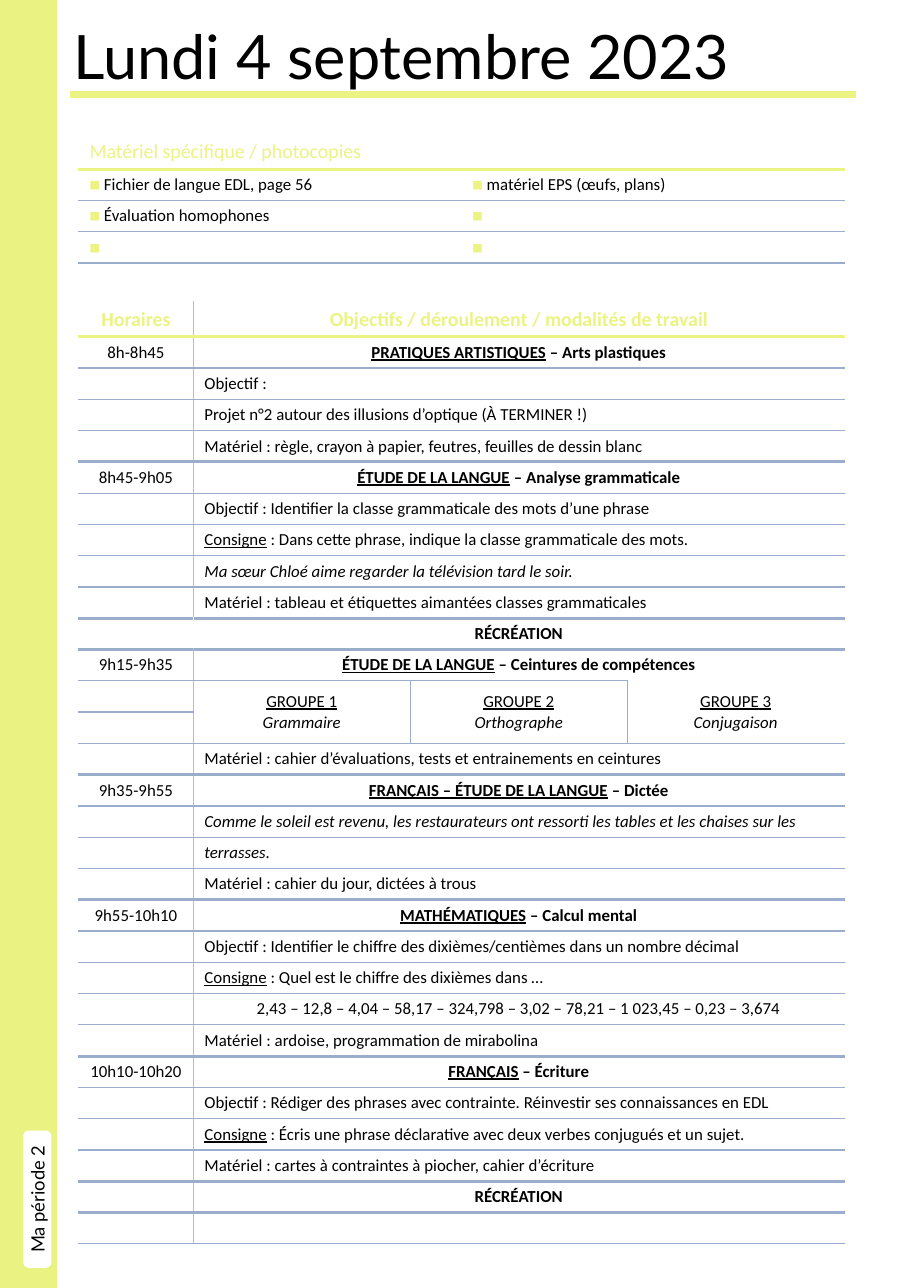
from dataclasses import dataclass

from lxml import etree
from pptx import Presentation
from pptx.dml.color import RGBColor
from pptx.enum.shapes import MSO_CONNECTOR, MSO_SHAPE
from pptx.enum.text import MSO_ANCHOR, PP_ALIGN
from pptx.oxml.ns import qn
from pptx.util import Pt

LEFT, CENTER = PP_ALIGN.LEFT, PP_ALIGN.CENTER
MIDDLE = MSO_ANCHOR.MIDDLE
RECT, ROUND = MSO_SHAPE.RECTANGLE, MSO_SHAPE.ROUNDED_RECTANGLE
STRAIGHT = MSO_CONNECTOR.STRAIGHT

BLACK = RGBColor(0x00, 0x00, 0x00)
WHITE = RGBColor(0xFF, 0xFF, 0xFF)
LIME = RGBColor(0xEA, 0xF3, 0x82)
YELLOW = RGBColor(0xEB, 0xF4, 0x82)
BLUE = RGBColor(0x9A, 0xAD, 0xCD)
PINK = RGBColor(0xDC, 0xA9, 0xCC)

# Table rules: colour and width in points
NONE, MARGIN, THIN = (WHITE, 1), (PINK, 1), (BLUE, 1)
THICK, ACCENT = (BLUE, 2.25), (YELLOW, 2.25)

TABLE_X, HEAD_H, ROW_H = 51.4, 22.8, 20.44
BULLET = "◼︎"

SUPPLIES = [
    ("Fichier de langue EDL, page 56", "matériel EPS (œufs, plans)"),
    ("Évaluation homophones", ""),
    ("", ""),
]
GROUPS = ["Grammaire", "Orthographe", "Conjugaison"]


@dataclass
class Row:
    """One line of the day; each run is a text and its b, i, u marks."""
    runs: list
    time: str = ""
    align: int = LEFT
    top: tuple = THIN
    side: tuple = MARGIN


def lesson(time, field, theme):
    return Row([(field, "bu"), (f" – {theme}", "b")], time, CENTER, THICK)


def note(text, marks="", align=LEFT):
    return Row([(text, marks)], align=align)


def task(text):
    return Row([("Consigne", "u"), (f" : {text}", "")])


def pause(side):
    return Row([("RÉCRÉATION", "b")], align=CENTER, top=THICK, side=side)


FIRST = lesson("8h-8h45", "PRATIQUES ARTISTIQUES", "Arts plastiques")
FIRST.top = ACCENT
GROUP_ROW = 12
DAY = [
    FIRST,
    note("Objectif :"),
    note("Projet n°2 autour des illusions d’optique (À TERMINER !)"),
    note("Matériel : règle, crayon à papier, feutres, feuilles de dessin blanc"),
    lesson("8h45-9h05", "ÉTUDE DE LA LANGUE", "Analyse grammaticale"),
    note("Objectif : Identifier la classe grammaticale des mots d’une phrase"),
    task("Dans cette phrase, indique la classe grammaticale des mots."),
    note("Ma sœur Chloé aime regarder la télévision tard le soir.", "i"),
    note("Matériel : tableau et étiquettes aimantées classes grammaticales"),
    pause(NONE),
    lesson("9h15-9h35", "ÉTUDE DE LA LANGUE", "Ceintures de compétences"),
    Row([]),
    Row([]),
    note("Matériel : cahier d’évaluations, tests et entrainements en ceintures"),
    lesson("9h35-9h55", "FRANÇAIS – ÉTUDE DE LA LANGUE", "Dictée"),
    note("Comme le soleil est revenu, les restaurateurs ont ressorti "
         "les tables et les chaises sur les", "i"),
    note("terrasses.", "i"),
    note("Matériel : cahier du jour, dictées à trous"),
    lesson("9h55-10h10", "MATHÉMATIQUES", "Calcul mental"),
    note("Objectif : Identifier le chiffre des dixièmes/centièmes "
         "dans un nombre décimal"),
    task("Quel est le chiffre des dixièmes dans …"),
    note("2,43 – 12,8 – 4,04 – 58,17 – 324,798 – 3,02 – 78,21 – 1 023,45 "
         "– 0,23 – 3,674", align=CENTER),
    note("Matériel : ardoise, programmation de mirabolina"),
    lesson("10h10-10h20", "FRANÇAIS", "Écriture"),
    note("Objectif : Rédiger des phrases avec contrainte. "
         "Réinvestir ses connaissances en EDL"),
    task("Écris une phrase déclarative avec deux verbes conjugués et un sujet."),
    note("Matériel : cartes à contraintes à piocher, cahier d’écriture"),
    pause(MARGIN),
    Row([], top=THICK),
]


def style(run, font, size, color, marks=""):
    run.font.name, run.font.size = font, Pt(size)
    run.font.color.rgb = color
    run.font.bold, run.font.italic = "b" in marks, "i" in marks
    run.font.underline = "u" in marks


def write(para, runs, align=LEFT, size=11, color=BLACK):
    para.alignment = align
    for text, marks in runs:
        run = para.add_run()
        run.text = text
        style(run, "Calibri", size, color, marks)


def dress(cell, left, right, top, bottom):
    """Fill a cell with white, draw its four borders and set its margins."""
    cell.fill.solid()
    cell.fill.fore_color.rgb = WHITE
    cell.vertical_anchor = MIDDLE
    cell.margin_top = cell.margin_bottom = Pt(3)
    props = cell._tc.get_or_add_tcPr()
    sides = zip(("lnL", "lnR", "lnT", "lnB"), (left, right, top, bottom))
    for place, (tag, (color, width)) in enumerate(sides):
        line = etree.Element(qn(f"a:{tag}"), w=str(Pt(width)))
        fill = etree.SubElement(line, qn("a:solidFill"))
        etree.SubElement(fill, qn("a:srgbClr"), val=str(color))
        props.insert(place, line)
    for para in cell.text_frame.paragraphs:
        # Keeps empty cells as low as the others
        etree.SubElement(para._p, qn("a:endParaRPr"), sz="1100")


def add_grid(slide, top, count, widths):
    height = HEAD_H + (count - 1) * ROW_H
    table = slide.shapes.add_table(count, len(widths), Pt(TABLE_X), Pt(top),
                                   Pt(sum(widths)), Pt(height)).table
    table.first_row = table.horz_banding = False
    for col, width in zip(table.columns, widths):
        col.width = Pt(width)
    for num, row in enumerate(table.rows):
        row.height = Pt(ROW_H if num else HEAD_H)
    return table


def first_para(table, row, col):
    return table.cell(row, col).text_frame.paragraphs[0]


def add_supplies(slide):
    table = add_grid(slide, 87.8, len(SUPPLIES) + 1, [250.2] * 2)
    write(first_para(table, 0, 0), [("Matériel spécifique / photocopies", "")],
          size=13, color=YELLOW)
    for num, items in enumerate(SUPPLIES, 1):
        for col, item in enumerate(items):
            para = first_para(table, num, col)
            write(para, [(f"{BULLET} " if item else BULLET, "")], color=YELLOW)
            if item:
                write(para, [(item, "")])
    rules = [NONE, ACCENT] + [THIN] * len(SUPPLIES)
    for num in range(len(SUPPLIES) + 1):
        for col in range(2):
            dress(table.cell(num, col), NONE, NONE, rules[num], rules[num + 1])


def add_groups(table):
    for col, group in enumerate(GROUPS, 1):
        cell = table.cell(GROUP_ROW, col)
        cell.merge(table.cell(GROUP_ROW + 1, col))
        write(cell.text_frame.paragraphs[0], [(f"GROUPE {col}", "u")], CENTER)
        write(cell.text_frame.add_paragraph(), [(group, "i")], CENTER)


def add_day(slide):
    table = add_grid(slide, 197.3, len(DAY) + 1, [75] + [141.8] * 3)
    heads = ("Horaires", "Objectifs / déroulement / modalités de travail")
    for col, head in enumerate(heads):
        write(first_para(table, 0, col), [(head, "b")], CENTER, 13, YELLOW)
    for num, row in enumerate(DAY, 1):
        if row.time:
            write(first_para(table, num, 0), [(row.time, "")], CENTER)
        write(first_para(table, num, 1), row.runs, row.align)
    add_groups(table)

    grouped = (GROUP_ROW, GROUP_ROW + 1)
    rules = [NONE] + [row.top for row in DAY] + [THIN]
    sides = [MARGIN] + [row.side for row in DAY]
    for num, side in enumerate(sides):
        inner = THIN if num in grouped else NONE
        edges = [NONE, side, inner, inner, NONE]
        if num not in grouped:
            table.cell(num, 1).merge(table.cell(num, 3))
        for col in range(4):
            top, bottom = rules[num], rules[num + 1]
            if col == 3 and num == GROUP_ROW:
                top = NONE
            if col == 3 and num == GROUP_ROW - 1:
                bottom = NONE
            dress(table.cell(num, col), edges[col], edges[col + 1], top, bottom)


def add_block(slide, kind, box, color):
    block = slide.shapes.add_shape(kind, *map(Pt, box))
    block.shadow.inherit = False
    block.fill.solid()
    block.fill.fore_color.rgb = block.line.color.rgb = color
    block.line.width = Pt(1)
    return block


def add_label(slide, text):
    label = add_block(slide, ROUND, (15.8, 739.4, 17.3, 88.6), WHITE)
    frame = label.text_frame
    frame.text = text
    frame.margin_left = frame.margin_right = 0
    frame.margin_top = frame.margin_bottom = 0
    frame.vertical_anchor = MIDDLE
    frame._txBody.bodyPr.set("vert", "vert270")
    frame.paragraphs[0].alignment = CENTER
    style(frame.paragraphs[0].runs[0], "Lato", 12, BLACK)


def add_rule(slide):
    rule = slide.shapes.add_connector(STRAIGHT, Pt(45.7), Pt(61.9),
                                      Pt(559.7), Pt(61.9))
    rule.line.color.rgb, rule.line.width = YELLOW, Pt(4.75)
    etree.SubElement(rule._element.spPr, qn("a:effectLst"))


def set_title(slide, text):
    title = slide.shapes.title
    title.left, title.top, title.width, title.height = map(
        Pt, (41, 8.6, 527, 55.4))
    frame = title.text_frame
    frame.text = text
    frame.vertical_anchor = MIDDLE
    frame.paragraphs[0].alignment = LEFT
    style(frame.paragraphs[0].runs[0], "Lato", 40, BLACK)


def main():
    deck = Presentation()
    deck.slide_width, deck.slide_height = Pt(595.4), Pt(841.7)
    slide = deck.slides.add_slide(deck.slide_layouts[5])
    add_block(slide, RECT, (0, 0, 36.7, 841.7), LIME)
    add_label(slide, "Ma période 2")
    add_rule(slide)
    set_title(slide, "Lundi 4 septembre 2023")
    add_supplies(slide)
    add_day(slide)
    deck.save("out.pptx")


if __name__ == "__main__":
    main()
